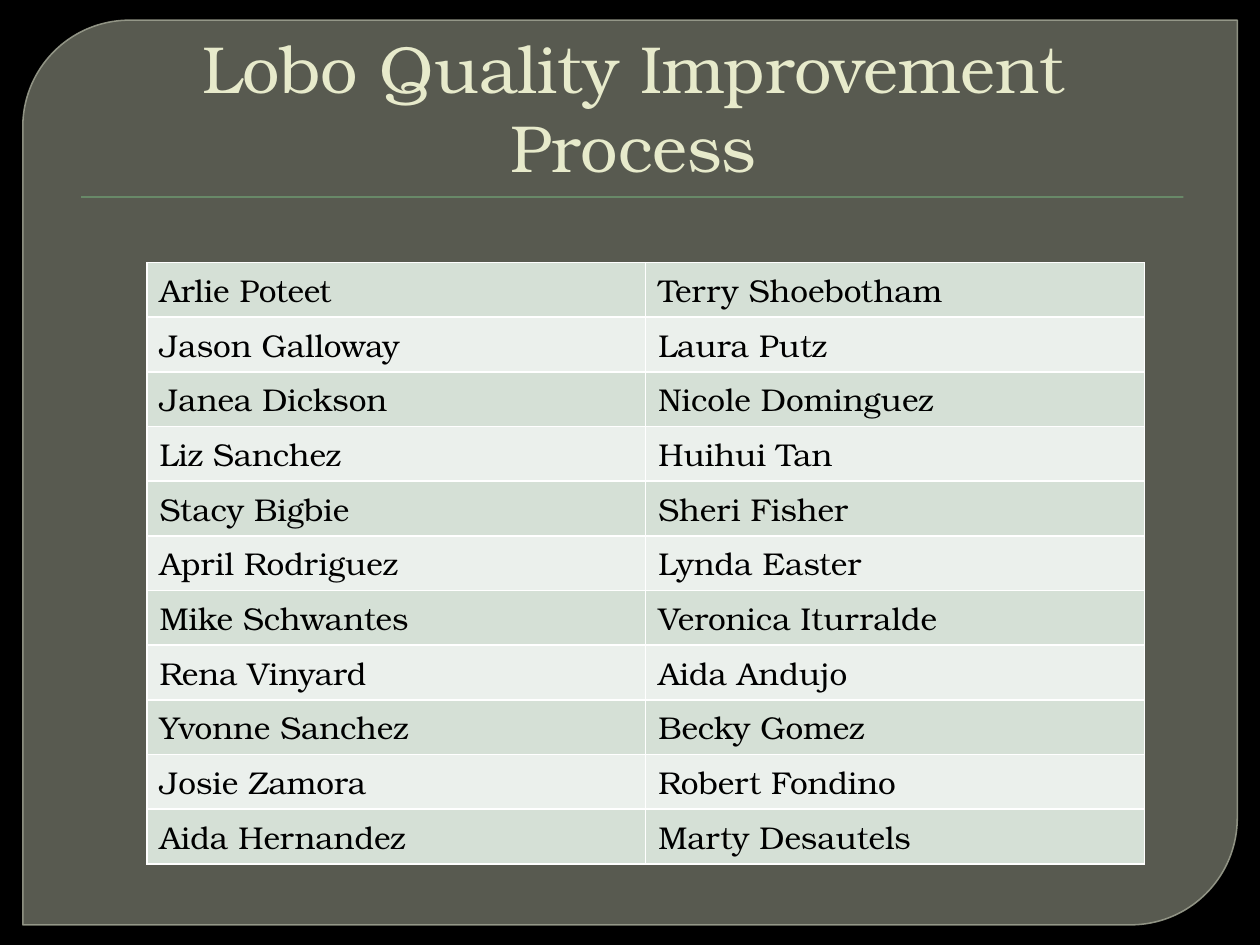
from lxml.etree import SubElement
from pptx import Presentation
from pptx.dml.color import RGBColor
from pptx.enum.shapes import MSO_SHAPE as Preset
from pptx.enum.text import MSO_ANCHOR as Anchor, MSO_AUTO_SIZE as AutoSize, PP_ALIGN as Align
from pptx.oxml import parse_xml
from pptx.oxml.ns import nsdecls, qn
from pptx.util import Pt

FONT = "TeX Gyre Bonum"
TITLE_FORMAT = {"name": FONT, "size": Pt(38), "bold": False}
NAME_FORMAT = {"name": FONT, "size": Pt(18), "bold": False}
BANDS = ("D5E0D6", "EBF0EC")
TEAM = [
    ("Arlie Poteet", "Terry Shoebotham"),
    ("Jason Galloway", "Laura Putz"),
    ("Janea Dickson", "Nicole Dominguez"),
    ("Liz Sanchez", "Huihui Tan"),
    ("Stacy Bigbie", "Sheri Fisher"),
    ("April Rodriguez", "Lynda Easter"),
    ("Mike Schwantes", "Veronica Iturralde"),
    ("Rena Vinyard", "Aida Andujo"),
    ("Yvonne Sanchez", "Becky Gomez"),
    ("Josie Zamora", "Robert Fondino"),
    ("Aida Hernandez", "Marty Desautels"),
]


def paint(target, color, opacity=100):
    """Give a fill a solid colour, with its opacity in percent."""
    target.solid()
    target.fore_color.rgb = RGBColor.from_string(color)
    if opacity < 100:
        # The colour element is reached through the fill's own XML
        solid = target._xPr.find(qn("a:solidFill"))
        SubElement(solid[0], qn("a:alpha"), val=str(opacity * 1000))


def style(font, formats, color):
    for name, value in formats.items():
        setattr(font, name, value)
    paint(font.fill, color)


def add_panel(page, box):
    panel = page.shapes.add_shape(Preset.ROUND_2_DIAG_RECTANGLE, *map(Pt, box))
    panel.shadow.inherit = False
    panel.adjustments[0] = 0.118
    panel.adjustments[1] = 0
    paint(panel.fill, "888B7B", 65)
    panel.line.width = Pt(0.87)
    paint(panel.line.fill, "9DA090", 88)


def add_rule(page, box):
    rule = page.shapes.add_shape(Preset.RECTANGLE, *map(Pt, box))
    rule.shadow.inherit = False
    paint(rule.fill, "72A376")
    rule.line.fill.background()
    # Soft shadow just below the rule
    effects = rule._element.spPr.find(qn("a:effectLst"))
    effects.append(parse_xml(
        f'<a:outerShdw {nsdecls("a")} blurRad="12700" dist="12700" dir="5400000">'
        '<a:srgbClr val="000000"><a:alpha val="75000"/></a:srgbClr></a:outerShdw>'))


def place_title(page, box, text):
    title = page.shapes.title
    title.left, title.top, title.width, title.height = map(Pt, box)
    frame = title.text_frame
    frame.word_wrap = True
    frame.auto_size = AutoSize.NONE
    frame.vertical_anchor = Anchor.BOTTOM
    para = frame.paragraphs[0]
    para.alignment = Align.CENTER
    para._p.get_or_add_pPr().set("marL", str(Pt(4.3)))
    span = para.add_run()
    span.text = text
    style(span.font, TITLE_FORMAT, "E7EACB")
    # Bring the title in front of the panel
    page.shapes._spTree.append(title._element)


def add_borders(cell, color, width):
    properties = cell._tc.get_or_add_tcPr()
    for index, side in enumerate(("lnL", "lnR", "lnT", "lnB")):
        properties.insert(index, parse_xml(
            f'<a:{side} {nsdecls("a")} w="{Pt(width)}"><a:solidFill>'
            f'<a:srgbClr val="{color}"/></a:solidFill></a:{side}>'))


def add_team_table(page, box, rows):
    table = page.shapes.add_table(len(rows), len(rows[0]), *map(Pt, box)).table
    table.first_row = False
    for row_index, names in enumerate(rows):
        for column_index, name in enumerate(names):
            cell = table.cell(row_index, column_index)
            paint(cell.fill, BANDS[row_index % 2])
            add_borders(cell, "FFFFFF", 1)
            span = cell.text_frame.paragraphs[0].add_run()
            span.text = name
            style(span.font, NAME_FORMAT, "000000")


def build_team_page(deck):
    page = deck.slides.add_slide(deck.slide_layouts[5])
    paint(page.background.fill, "000000")
    add_panel(page, (13, 11.5, 694, 517))
    add_rule(page, (46.3, 112.2, 630, 0.7))
    place_title(page, (36, 20, 648, 90), "Lobo Quality Improvement Process")
    add_team_table(page, (84, 150, 570, 321), TEAM)


def main():
    deck = Presentation()
    deck.slide_width, deck.slide_height = Pt(720), Pt(540)
    build_team_page(deck)
    deck.save("out.pptx")


if __name__ == "__main__":
    main()
